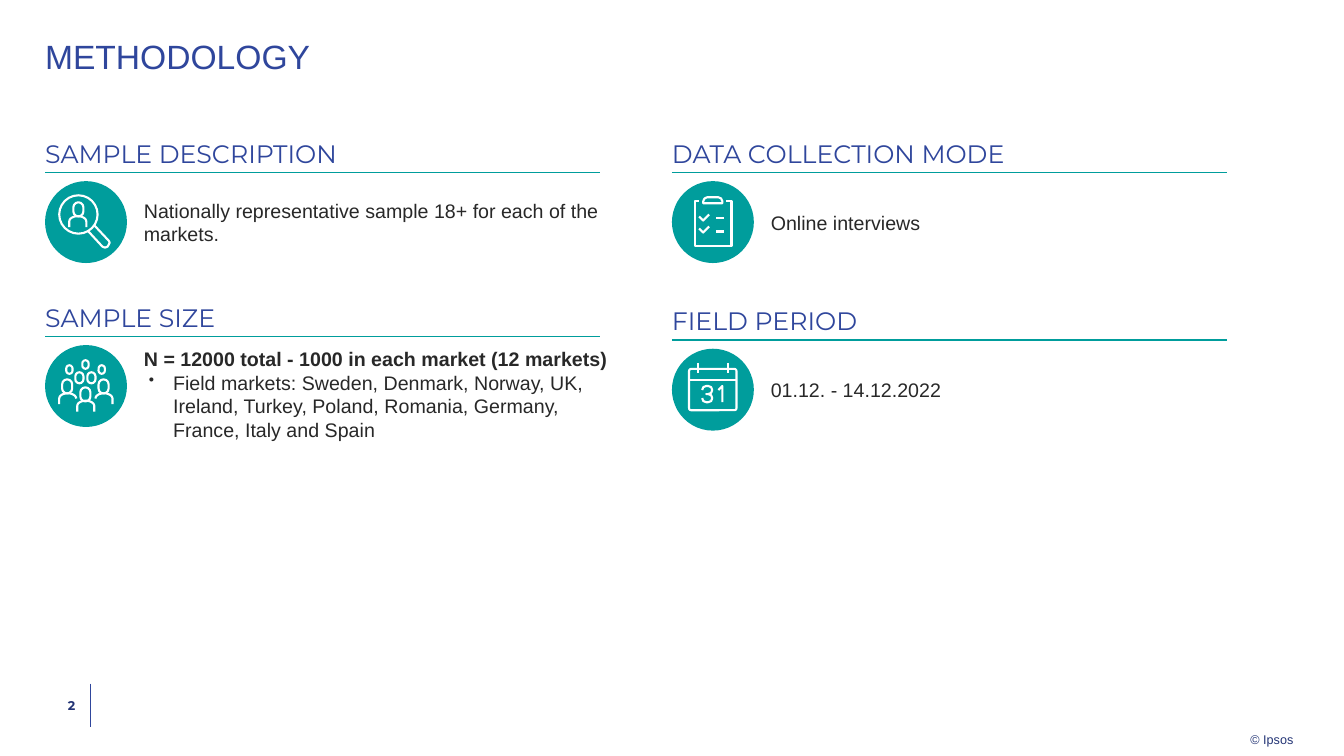
import math
import pptx
import pptx.util
import pptx.dml.color
import pptx.enum.shapes
import pptx.enum.text
import pptx.oxml.ns
from lxml import etree

Pt = pptx.util.Pt
Anchor = pptx.enum.text.MSO_ANCHOR
Preset = pptx.enum.shapes.MSO_SHAPE
COLORS = {"blue": "2F469C", "navy": "233475", "teal": "009D9C", "text": "282828", "white": "FFFFFF"}
RGB = {name: pptx.dml.color.RGBColor.from_string(value) for name, value in COLORS.items()}


def write_text(shape, box, text, size, font, color, anchor=Anchor.TOP, insets=(0, 0, 0, 0)):
    shape.left, shape.top, shape.width, shape.height = [Pt(value) for value in box]
    frame = shape.text_frame
    frame.text = text
    frame.word_wrap = True
    frame.auto_size = pptx.enum.text.MSO_AUTO_SIZE.NONE
    frame.vertical_anchor = anchor
    frame.margin_left, frame.margin_top, frame.margin_right, frame.margin_bottom = [Pt(value) for value in insets]
    for paragraph in frame.paragraphs:
        paragraph.alignment = pptx.enum.text.PP_ALIGN.LEFT
        for run in paragraph.runs:
            run.font.size = Pt(size)
            run.font.name = font
            run.font.color.rgb = RGB[color]
    return frame


def draw_line(shapes, start, end, color, width):
    points = [Pt(value) for value in (*start, *end)]
    line = shapes.add_connector(pptx.enum.shapes.MSO_CONNECTOR.STRAIGHT, *points)
    line.line.color.rgb = RGB[color]
    line.line.width = Pt(width)
    etree.SubElement(line._element.spPr, pptx.oxml.ns.qn("a:effectLst"))


presentation = pptx.Presentation()
presentation.slide_width = Pt(960)
presentation.slide_height = Pt(540)
slide = presentation.slides.add_slide(presentation.slide_layouts[5])

title = write_text(slide.shapes.title, (32.2, 28.8, 895.7, 30.2), "METHODOLOGY", 24, "Arial", "blue")
title.paragraphs[0].line_spacing = 0.9

LEFT, RIGHT = 32.2, 480
COLUMN_WIDTH = 396.7
ICON_SIZE = 58.5
markets = (
    "N = 12000 total - 1000 in each market (12 markets)\n"
    "Field markets: Sweden, Denmark, Norway, UK, Ireland, Turkey, "
    "Poland, Romania, Germany, France, Italy and Spain"
)
sections = [
    ("search", LEFT, 123.1, "SAMPLE DESCRIPTION", "Nationally representative sample 18+ for each of the markets.", 141.8, 326.2, 34),
    ("people", LEFT, 240.2, "SAMPLE SIZE", markets, 247.7, 340.6, 67.7),
    ("clipboard", RIGHT, 123.1, "DATA COLLECTION MODE", "Online interviews", 150.2, 326.2, 17),
    ("calendar", RIGHT, 242.8, "FIELD PERIOD", "01.12. - 14.12.2022", 269.5, 326.2, 17),
]
icons = {}
bodies = {}
for name, left, rule, heading, body, body_top, body_width, body_height in sections:
    write_text(slide.shapes.add_textbox(0, 0, 0, 0), (left, rule - 28.1, COLUMN_WIDTH, 28.1),
               heading, 18, "Montserrat", "blue", Anchor.BOTTOM, (0, 0, 0, 2.9))
    draw_line(slide.shapes, (left, rule), (left + COLUMN_WIDTH, rule), "teal", 1)
    bodies[name] = write_text(slide.shapes.add_textbox(0, 0, 0, 0), (left + 70.6, body_top, body_width, body_height),
                              body, 14, "Arial", "text", Anchor.MIDDLE)
    group = slide.shapes.add_group_shape()
    icons[name] = (group.shapes, left, rule + 6.3)
    circle = group.shapes.add_shape(Preset.OVAL, Pt(left), Pt(rule + 6.3), Pt(ICON_SIZE), Pt(ICON_SIZE))
    circle.shadow.inherit = False
    circle.fill.solid()
    circle.fill.fore_color.rgb = RGB["teal"]
    circle.line.fill.background()

total, bullet = bodies["people"].paragraphs
total.runs[0].font.bold = True
properties = bullet._p.get_or_add_pPr()
properties.set("marL", str(Pt(20.9)))
properties.set("indent", str(-Pt(17.3)))
etree.SubElement(properties, pptx.oxml.ns.qn("a:buSzPct"), val="80000")
etree.SubElement(properties, pptx.oxml.ns.qn("a:buChar"), char="•")

outlines = [
    ("search", Preset.OVAL, 10.1, 10.1, 27.4, 27.4),
    ("calendar", Preset.ROUNDED_RECTANGLE, 12.2, 14.4, 33.9, 29.5),
]
heads = [("search", 20.2, 15.1, 7.2, 10.1)]
heads += [("people", x, y, 7.2, 10.1) for x, y in ((25.2, 30.2), (12.2, 24.5), (38.2, 24.5))]
heads += [("people", x, 19.4, 5.8, 7.9) for x in (21.6, 30.2)]
heads += [("people", x, y, 4.5, 6.1) for x, y in ((26.6, 10.8), (15.1, 14.4), (38.2, 14.4))]
outlines += [(name, Preset.FLOWCHART_TERMINATOR, *box) for name, *box in heads]
for name, preset, x, y, width, height in outlines:
    shapes, left, top = icons[name]
    if preset == Preset.FLOWCHART_TERMINATOR:
        preset = Preset.ROUNDED_RECTANGLE
        corner = 0.5
    else:
        corner = 0.05
    shape = shapes.add_shape(preset, Pt(left + x), Pt(top + y), Pt(width), Pt(height))
    if preset == Preset.ROUNDED_RECTANGLE:
        shape.adjustments[0] = corner
    shape.shadow.inherit = False
    shape.fill.background()
    shape.line.color.rgb = RGB["white"]
    shape.line.width = Pt(1.5)

strokes = [
    ("clipboard", True, [(22.3, 15.8), (22.3, 14.4), (23.2, 12.4), (25.2, 11.5),
                         (33.1, 11.5), (35.1, 12.4), (36, 14.4), (36, 15.8)]),
    ("clipboard", False, [(38.9, 14.4), (42.5, 14.4), (42.5, 46.1), (16.6, 46.1), (16.6, 14.4), (19.4, 14.4)]),
    ("calendar", False, [(21.6, 29.5), (22.4, 27.4), (24.5, 26.6), (25.9, 26.6), (28, 27.4), (28.8, 29.5),
                         (28, 31.6), (25.9, 32.4), (24.5, 32.4), (25.9, 32.4), (28, 33.2), (28.8, 35.3),
                         (28, 37.4), (25.9, 38.2), (24.5, 38.2), (22.4, 37.4), (21.6, 35.3)]),
    ("calendar", False, [(36, 38.2), (36, 26.6), (33.1, 29.5)]),
    ("search", False, [(35.3, 31.7), (45.4, 42.5), (46.1, 43.9), (45.4, 45.4), (44.6, 46.8),
                       (42.8, 47.5), (41, 46.8), (31, 36)]),
]
for y in (25.2, 33.8):
    strokes.append(("clipboard", False, [(19.4, y), (22.3, y + 2.9), (26.6, y - 1.4)]))

shoulders = [
    ("search", 23.4, 28.8, True, True),
    ("people", 29.1, 43.5, True, True),
    ("people", 16.2, 38.2, True, False),
    ("people", 42.1, 38.2, False, True),
]
for name, center, spring, left_arm, right_arm in shoulders:
    angles = [math.radians(180 - 15 * step) for step in range(13)]
    arc = [(center + 6.1 * math.cos(angle), spring - 3.8 * math.sin(angle)) for angle in angles]
    left_end = [(center - 6.1, spring + 4)] if left_arm else []
    right_end = [(center + 6.1, spring + 4)] if right_arm else []
    strokes.append((name, False, left_end + arc + right_end))

for name, closed, points in strokes:
    shapes, left, top = icons[name]
    first, *rest = [(Pt(left + x), Pt(top + y)) for x, y in points]
    builder = shapes.build_freeform(*first)
    builder.add_line_segments(rest, close=closed)
    stroke = builder.convert_to_shape()
    stroke.shadow.inherit = False
    stroke.fill.background()
    stroke.line.color.rgb = RGB["white"]
    stroke.line.width = Pt(1.5)

icon_lines = [
    ("clipboard", 31.7, 26.6, 37.4, 26.6),
    ("clipboard", 31.7, 36, 37.4, 36),
    ("calendar", 12.2, 22.3, 46.1, 22.3),
    ("calendar", 18.7, 10.1, 18.7, 17.3),
    ("calendar", 40.3, 10.1, 40.3, 17.3),
]
for name, x1, y1, x2, y2 in icon_lines:
    shapes, left, top = icons[name]
    draw_line(shapes, (left + x1, top + y1), (left + x2, top + y2), "white", 1.5)

draw_line(slide.shapes, (64.8, 488.4), (64.8, 519.5), "blue", 0.5)
number = write_text(slide.shapes.add_textbox(0, 0, 0, 0), (32.2, 488.4, 32.6, 31.1), "2", 9,
                    "Montserrat", "navy", Anchor.MIDDLE, (0, 0, 11, 0))
number.paragraphs[0].alignment = pptx.enum.text.PP_ALIGN.RIGHT
number.paragraphs[0].runs[0].font.bold = True
rights = write_text(slide.shapes.add_textbox(0, 0, 0, 0), (893.2, 519.8, 31, 13.7), "© Ipsos", 9,
                    "Arial", "navy", insets=(0, 2.9, 0, 0))
rights.word_wrap = False

presentation.save("out.pptx")
